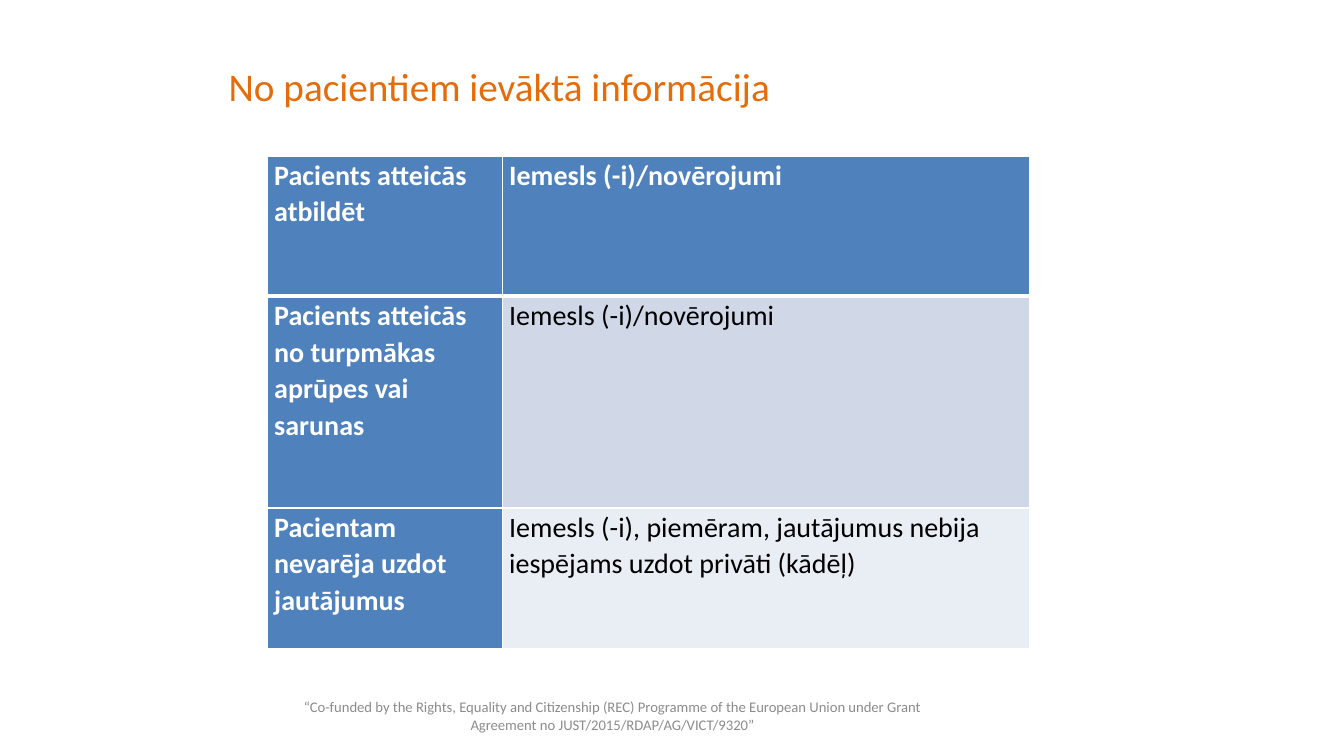
from lxml import etree
from pptx import Presentation
from pptx.dml.color import RGBColor
from pptx.enum.text import MSO_ANCHOR, PP_ALIGN
from pptx.oxml.ns import qn
from pptx.util import Inches, Pt

MIDDLE = MSO_ANCHOR.MIDDLE
LEFT, CENTER = PP_ALIGN.LEFT, PP_ALIGN.CENTER
FONT = "Calibri"
COLORS = {
    "title": "E46C0A", "note": "8C8C8C", "head": "4F81BD",
    "band": "D0D8E8", "pale": "E9EDF4", "white": "FFFFFF", "black": "000000",
}
COLS = [2.33, 5.23]
ROWS = [
    (1.39, "head", "Pacients atteicās atbildēt", "Iemesls (-i)/novērojumi"),
    (2.1, "band", "Pacients atteicās no turpmākas aprūpes vai sarunas",
     "Iemesls (-i)/novērojumi"),
    (1.39, "pale", "Pacientam nevarēja uzdot jautājumus",
     "Iemesls (-i), piemēram, jautājumus nebija iespējams uzdot privāti (kādēļ)"),
]


def color(name):
    """Return the named colour."""
    return RGBColor.from_string(COLORS[name])


def write(frame, text, size=20, tint="black", bold=False, align=LEFT,
          line=1.0, after=0):
    """Put one formatted paragraph into a text frame."""
    frame.word_wrap = True
    para = frame.paragraphs[0]
    para.alignment = align
    para.line_spacing = line
    para.space_after = Pt(after)
    run = para.add_run()
    run.text = text
    font = run.font
    font.name, font.size, font.bold = FONT, Pt(size), bold
    font.color.rgb = color(tint)


def add_text(slide, box, text, **form):
    """Add a text box centred vertically."""
    frame = slide.shapes.add_textbox(*map(Inches, box)).text_frame
    frame.vertical_anchor = MIDDLE
    write(frame, text, **form)


def set_edges(cell, top, bottom):
    """Draw white cell borders ahead of the fill."""
    props = cell._tc.get_or_add_tcPr()
    widths = {"L": 1, "R": 1, "T": top, "B": bottom}
    for spot, (side, width) in enumerate(widths.items()):
        edge = etree.Element(qn(f"a:ln{side}"), w=str(Pt(width)))
        fill = etree.SubElement(edge, qn("a:solidFill"))
        etree.SubElement(fill, qn("a:srgbClr"), val=COLORS["white"])
        props.insert(spot, edge)


def add_grid(slide, left, top):
    """Add the table of reasons."""
    high = sum(row[0] for row in ROWS)
    table = slide.shapes.add_table(
        len(ROWS), len(COLS), Inches(left), Inches(top),
        Inches(sum(COLS)), Inches(high)).table
    for col, width in zip(table.columns, COLS):
        col.width = Inches(width)
    for r, (height, shade, *texts) in enumerate(ROWS):
        table.rows[r].height = Inches(height)
        for c, text in enumerate(texts):
            cell = table.cell(r, c)
            head = r == 0 or c == 0
            cell.margin_left = cell.margin_right = Inches(0.07)
            cell.margin_top = cell.margin_bottom = 0
            cell.fill.solid()
            cell.fill.fore_color.rgb = color("head" if head else shade)
            set_edges(cell, 3 if r == 1 else 1, 3 if r == 0 else 1)
            write(cell.text_frame, text, tint="white" if head else "black",
                  bold=head, line=1.07, after=6)


def main():
    """Build and save the slide."""
    deck = Presentation()
    deck.slide_width, deck.slide_height = Inches(13.33), Inches(7.5)
    slide = deck.slides.add_slide(deck.slide_layouts[6])
    add_text(slide, (2.63, 6.9, 6.89, 0.4),
             "“Co-funded by the Rights, Equality and Citizenship (REC) Programme "
             "of the European Union under Grant Agreement no "
             "JUST/2015/RDAP/AG/VICT/9320”",
             size=10.5, tint="note", align=CENTER)
    add_text(slide, (2.17, 0.3, 9, 1.17), "No pacientiem ievāktā informācija",
             size=28, tint="title", line=0.9)
    add_grid(slide, 2.65, 1.55)
    deck.save("out.pptx")


if __name__ == "__main__":
    main()
